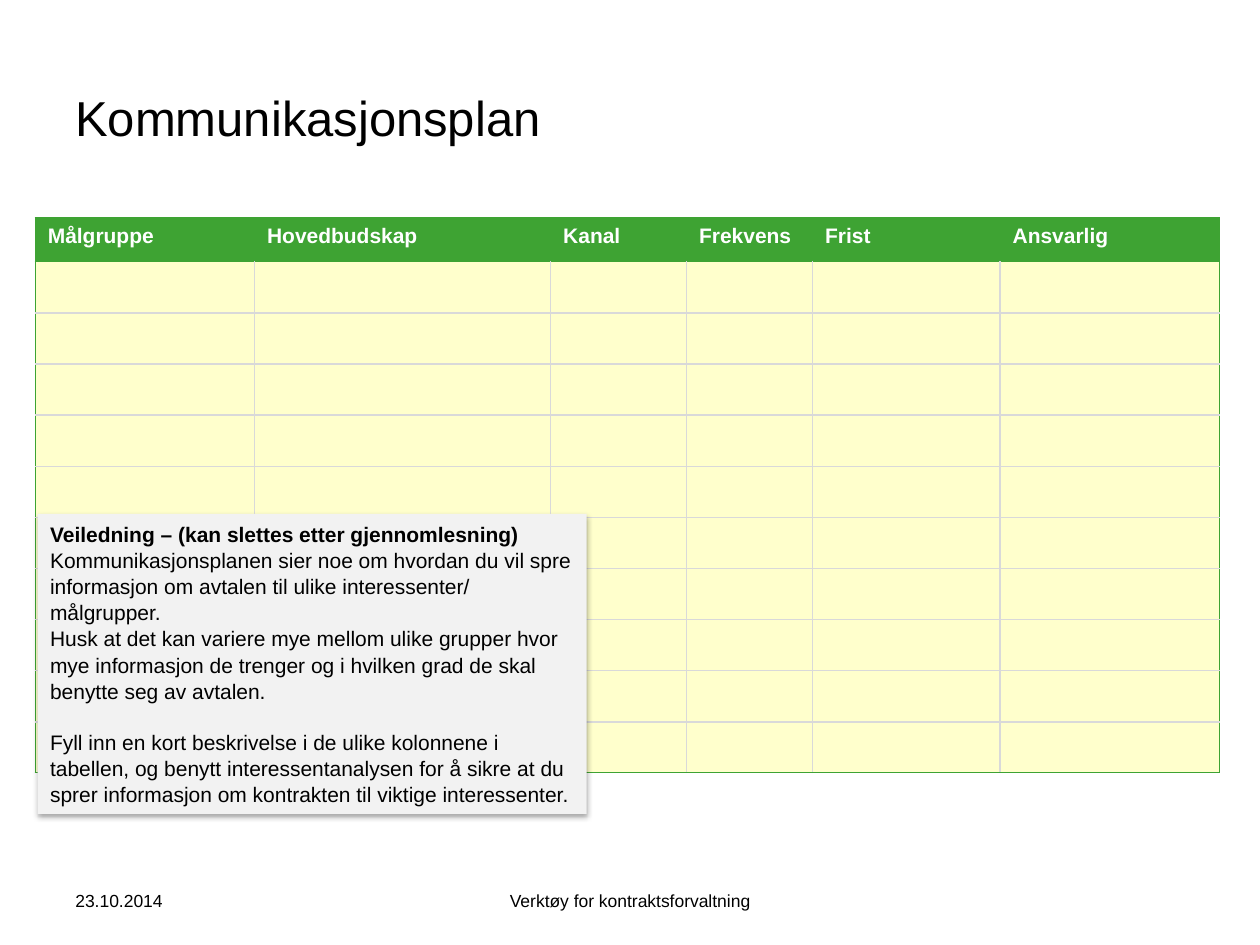
from lxml.etree import SubElement
from pptx import Presentation
from pptx.dml.color import RGBColor
from pptx.enum.shapes import MSO_SHAPE
from pptx.enum.text import MSO_ANCHOR, PP_ALIGN
from pptx.oxml.ns import qn
from pptx.util import Cm, Pt

BLACK = RGBColor(0x00, 0x00, 0x00)
WHITE = RGBColor(0xFF, 0xFF, 0xFF)
GREEN = RGBColor(0x3E, 0xA3, 0x33)
CREAM = RGBColor(0xFF, 0xFF, 0xCC)
GREY = RGBColor(0xD9, 0xD9, 0xD9)
PALE = RGBColor(0xF2, 0xF2, 0xF2)


def style(para, size, color=BLACK, bold=False):
    para.font.name = "Arial"
    para.font.size = Pt(size)
    para.font.bold = bold
    para.font.color.rgb = color


def border(cell, side, color, width):
    line = SubElement(cell._tc.get_or_add_tcPr(), qn("a:ln" + side), w=str(Pt(width)))
    fill = SubElement(line, qn("a:solidFill"))
    SubElement(fill, qn("a:srgbClr"), val=str(color))


deck = Presentation()
deck.slide_width = Cm(25.4)
deck.slide_height = Cm(19.05)
slide = deck.slides.add_slide(deck.slide_layouts[6])
shapes = slide.shapes

labels = [
    ("Kommunikasjonsplan", 1.27, 0.76, 22.86, 3.18, 28, PP_ALIGN.LEFT),
    ("23.10.2014", 1.27, 17.65, 5.92, 1.02, 10, PP_ALIGN.LEFT),
    ("Verktøy for kontraktsforvaltning", 8.68, 17.65, 8.04, 1.02, 10, PP_ALIGN.CENTER),
]
for text, left, top, width, height, size, align in labels:
    box = shapes.add_textbox(Cm(left), Cm(top), Cm(width), Cm(height))
    frame = box.text_frame
    frame.word_wrap = True
    frame.vertical_anchor = MSO_ANCHOR.MIDDLE
    para = frame.paragraphs[0]
    para.text = text
    para.alignment = align
    style(para, size)

heads = ["Målgruppe", "Hovedbudskap", "Kanal", "Frekvens", "Frist", "Ansvarlig"]
widths = [4.42, 5.97, 2.74, 2.54, 3.78, 4.42]
rows = 11
cols = len(heads)
grid = shapes.add_table(rows, cols, Cm(0.71), Cm(4.39), Cm(sum(widths)), Cm(11.2)).table
grid.horz_banding = False
for col, width in zip(grid.columns, widths):
    col.width = Cm(width)
for r, row in enumerate(grid.rows):
    row.height = Cm(1.03 if r else 0.89)
    for c, cell in enumerate(row.cells):
        edges = {
            "L": r == 0 or c == 0,
            "R": r == 0 or c == cols - 1,
            "T": r <= 1,
            "B": r in (0, rows - 1),
        }
        for side, outer in edges.items():
            border(cell, side, GREEN if outer else GREY, 0.75 if outer else 1)
        cell.fill.solid()
        cell.fill.fore_color.rgb = CREAM if r else GREEN
        if r == 0:
            para = cell.text_frame.paragraphs[0]
            para.text = heads[c]
            style(para, 12, WHITE, True)

note = shapes.add_shape(MSO_SHAPE.RECTANGLE, Cm(0.76), Cm(10.36), Cm(11.07), Cm(6.05))
note.shadow.inherit = False
note.fill.solid()
note.fill.fore_color.rgb = PALE
note.line.fill.background()
glow = note._element.spPr.find(qn("a:effectLst"))
shade = SubElement(glow, qn("a:outerShdw"), blurRad=str(Pt(3.1)), dist=str(Pt(1.8)),
                   dir="5400000", algn="t", rotWithShape="0")
tint = SubElement(shade, qn("a:srgbClr"), val=str(BLACK))
SubElement(tint, qn("a:alpha"), val="35000")

lines = [
    "Veiledning – (kan slettes etter gjennomlesning)",
    "Kommunikasjonsplanen sier noe om hvordan du vil spre informasjon om avtalen "
    "til ulike interessenter/ målgrupper.",
    "Husk at det kan variere mye mellom ulike grupper hvor mye informasjon de "
    "trenger og i hvilken grad de skal benytte seg av avtalen.",
    "Fyll inn en kort beskrivelse i de ulike kolonnene i tabellen, og benytt "
    "interessentanalysen for å sikre at du sprer informasjon om kontrakten til "
    "viktige interessenter.",
]
frame = note.text_frame
frame.word_wrap = True
frame.vertical_anchor = MSO_ANCHOR.TOP
for i, text in enumerate(lines):
    para = frame.add_paragraph() if i else frame.paragraphs[0]
    para.text = text
    para.alignment = PP_ALIGN.LEFT
    para.line_spacing = 1.04
    style(para, 12, bold=i == 0)
frame.paragraphs[-1].space_before = Pt(14.4)

deck.save("out.pptx")
